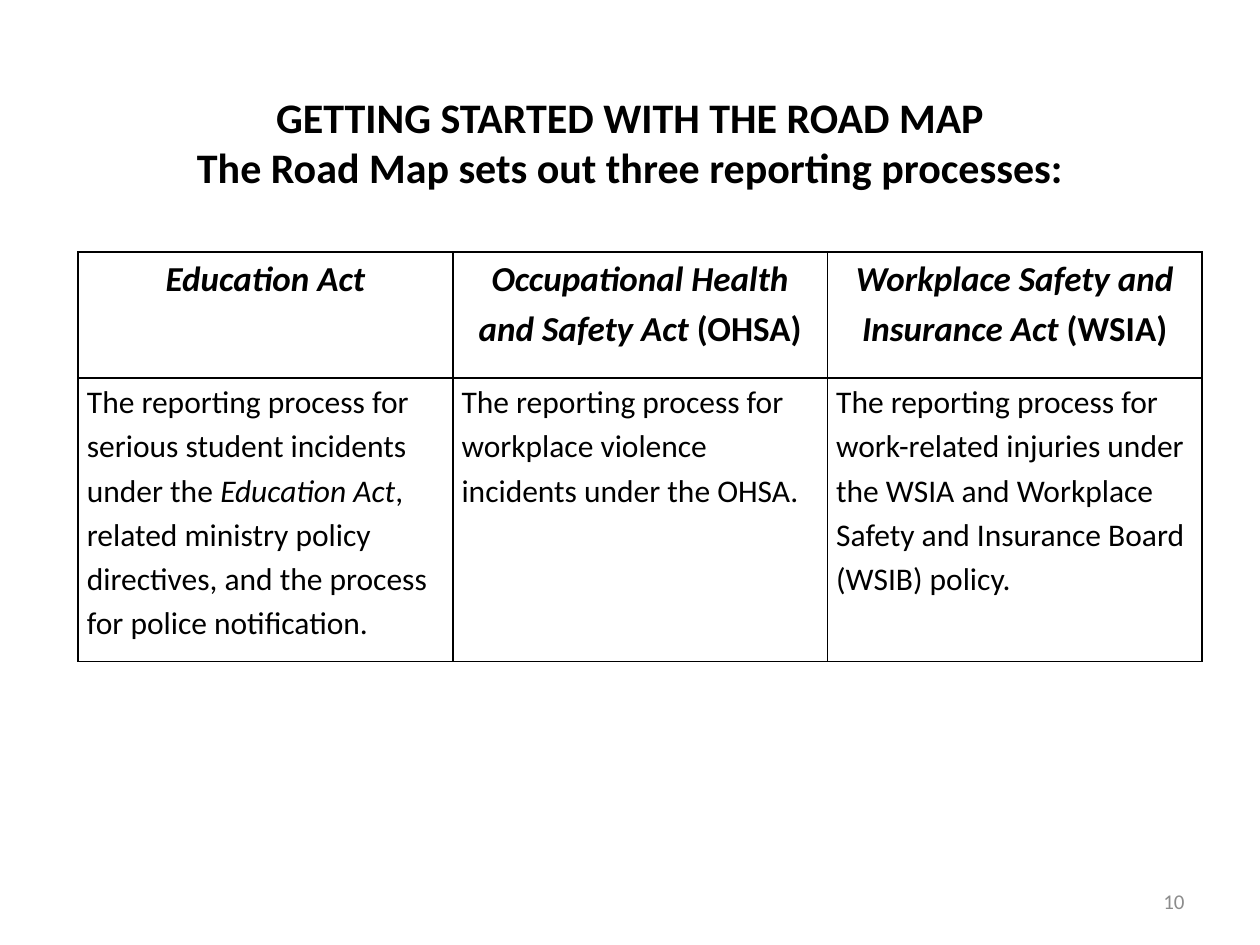
from lxml import etree
from pptx import Presentation, util as u
from pptx.dml.color import RGBColor
from pptx.enum import text
from pptx.oxml import ns


def style(font, size, color="000000", bold=False):
    font.name = "Calibri"
    font.size = u.Pt(size)
    font.bold = bold
    font.color.rgb = RGBColor.from_string(color)


def add_border(cell, side):
    line = etree.SubElement(cell._tc.get_or_add_tcPr(), ns.qn(f"a:{side}"), w=str(u.Pt(1)))
    fill = etree.SubElement(line, ns.qn("a:solidFill"))
    etree.SubElement(fill, ns.qn("a:srgbClr"), val="000000")


deck = Presentation()
deck.slide_width, deck.slide_height = u.Inches(10), u.Inches(7.5)
width, height = deck.slide_width, deck.slide_height
page = deck.slides.add_slide(deck.slide_layouts[6])

labels = [
    ("GETTING STARTED WITH THE ROAD MAP\vThe Road Map sets out three reporting processes:",
     (0.05, 0.5 / 7.5, 0.9, 1.25 / 7.5), text.PP_ALIGN.CENTER, 24, "000000", True),
    ("10", (0.717, 6.95 / 7.5, 0.233, 0.4 / 7.5), text.PP_ALIGN.RIGHT, 12, "8C8C8C", False),
]
for words, (left, top, wide, high), align, size, color, bold in labels:
    box = page.shapes.add_textbox(
        int(width * left), int(height * top), int(width * wide), int(height * high))
    box.text_frame.word_wrap = True
    box.text_frame.vertical_anchor = text.MSO_ANCHOR.MIDDLE
    para = box.text_frame.paragraphs[0]
    para.text = words
    para.alignment = align
    style(para.font, size, color, bold)

processes = [
    [
        [("Education Act", True)],
        [("Occupational Health and Safety Act ", True), ("(OHSA)", False)],
        [("Workplace Safety and Insurance Act", True), (" (WSIA)", False)],
    ],
    [
        [("The reporting process for serious student incidents under the ", False),
         ("Education Act", True),
         (", related ministry policy directives, and the process for police notification.", False)],
        [("The reporting process for workplace violence incidents under the OHSA.", False)],
        [("The reporting process for work-related injuries under the WSIA and "
          "Workplace Safety and Insurance Board (WSIB) policy.", False)],
    ],
]
row_heights = [u.Inches(1), u.Inches(2.25)]
table = page.shapes.add_table(
    2, 3, int(width * 0.062), int(height * 2 / 7.5), int(width * 0.892), sum(row_heights)).table
table.first_row = table.horz_banding = False

for r, (row, row_height) in enumerate(zip(processes, row_heights)):
    table.rows[r].height = row_height
    for c, spans in enumerate(row):
        cell = table.cell(r, c)
        cell.margin_left = cell.margin_right = u.Inches(0.07)
        cell.margin_top = cell.margin_bottom = 0
        for side in ("lnL", "lnR", "lnT", "lnB"):
            add_border(cell, side)
        cell.fill.background()
        para = cell.text_frame.paragraphs[0]
        para.line_spacing = 1.15
        if r == 0:
            para.alignment = text.PP_ALIGN.CENTER
            para.space_before = para.space_after = u.Pt(5)
        style(para.font, 18 if r else 20, bold=r == 0)
        for words, italic in spans:
            span = para.add_run()
            span.text = words
            span.font.italic = italic

deck.save("out.pptx")
